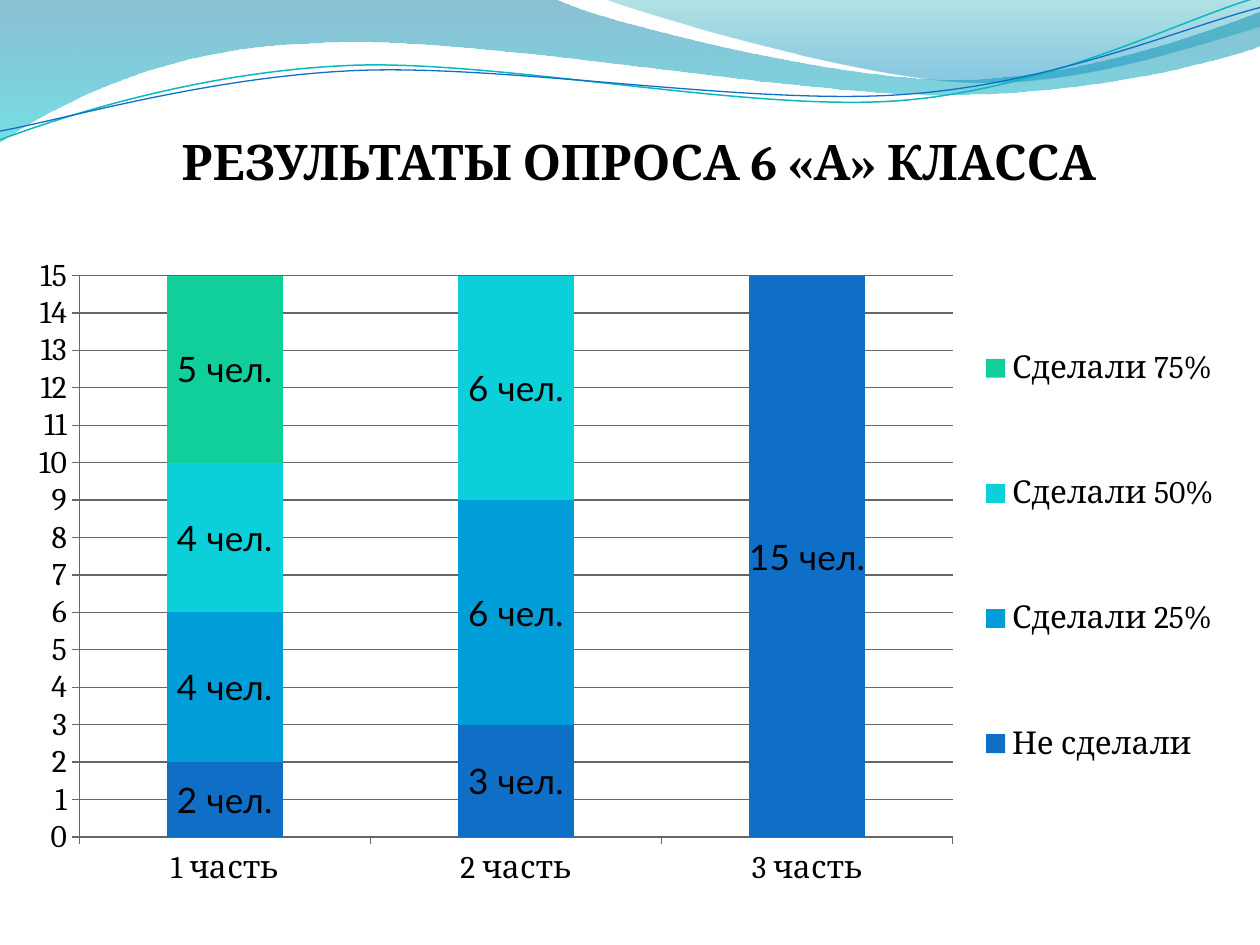
from dataclasses import dataclass

import pptx
import pptx.chart.data
import pptx.dml.color
import pptx.enum.chart
import pptx.enum.text
import pptx.oxml
import pptx.oxml.ns
import pptx.util
from lxml import etree

Point = tuple[float, float]
Curve = tuple[Point, Point, Point]


@dataclass(frozen=True)
class Theme:
    font: str = "Cambria"
    label_font: str = "Lato"
    title_size: float = 28
    axis_size: float = 18
    label_size: float = 20
    text: str = "000000"
    rule: str = "666666"


@dataclass(frozen=True)
class Area:
    """A rectangle in percent of its surroundings."""
    left: float
    top: float
    width: float
    height: float


@dataclass(frozen=True)
class Stop:
    position: float
    color: str
    opacity: int


@dataclass(frozen=True)
class Wave:
    """A filled band or an open line; each segment is a line's end or a Bezier curve, in inches."""
    start: Point
    segments: tuple[tuple[Point] | Curve, ...]
    stops: tuple[Stop, ...] = ()
    line_color: str = ""
    line_width: float = 0


@dataclass(frozen=True)
class Answer:
    name: str
    counts: tuple[int | None, ...]
    color: str


THEME = Theme()
TITLE_AREA = Area(11.35, 13.27, 78.7, 7.6)
CHART_AREA = Area(1.2, 25.87, 96.9, 69.33)
PLOT_AREA = Area(5.25, 4.75, 71.55, 85.7)
LEGEND_AREA = Area(78.6, 2.6, 20.5, 89.9)

WAVES = (
    Wave((0, 0), (
        ((4.4, -0.01),),
        ((4.76, 0.17), (6.64, 0.63), (7.58, 0.63)),
        ((8.53, 0.63), (9.58, 0.26), (10, 0.09)),
        ((10.01, 0.36),),
        ((9.83, 0.44), (8.7, 0.76), (7.46, 0.75)),
        ((6.22, 0.75), (3.82, 0.28), (2.57, 0.34)),
        ((1.29, 0.36), (0.46, 0.83), (-0.01, 1.13)),
    ), stops=(Stop(0, "0074A1", 45), Stop(1, "00C6CF", 55))),
    Wave((4.79, -0.01), (
        ((5.09, 0.11), (6.82, 0.62), (7.69, 0.65)),
        ((8.56, 0.69), (9.61, 0.32), (10, 0.21)),
        ((10, 0),),
    ), stops=(Stop(0, "00A1A9", 30), Stop(0.8, "008BBF", 45))),
    Wave((0, 1.11), (
        ((0.48, 0.93), (1.58, 0.57), (2.77, 0.52)),
        ((3.95, 0.47), (5.93, 0.89), (7.13, 0.8)),
        ((8.33, 0.71), (9.38, 0.15), (9.98, -0.02)),
    ), line_color="0AB8BF", line_width=0.85),
    Wave((0, 1.04), (
        ((0.47, 0.96), (1.64, 0.61), (2.83, 0.56)),
        ((4.03, 0.51), (5.97, 0.84), (7.17, 0.75)),
        ((8.36, 0.67), (9.41, 0.21), (10, 0.06)),
    ), line_color="0F6FC6", line_width=0.75),
)

PARTS = ("1 часть", "2 часть", "3 часть")
ANSWERS = (
    Answer("Не сделали", (2, 3, 15), "0F6FC6"),
    Answer("Сделали 25%", (4, 6, None), "009DD9"),
    Answer("Сделали 50%", (4, 6, None), "0BD0D9"),
    Answer("Сделали 75%", (5, None, None), "10CF9B"),
)


def rgb(color: str) -> pptx.dml.color.RGBColor:
    return pptx.dml.color.RGBColor.from_string(color)


def set_font(font, name: str, size: float, bold: bool = False) -> None:
    font.name, font.size, font.bold = name, pptx.util.Pt(size), bold
    font.color.rgb = rgb(THEME.text)


def on_slide(area: Area, deck) -> tuple[int, int, int, int]:
    width, height = deck.slide_width, deck.slide_height
    return (int(area.left * width / 100), int(area.top * height / 100),
            int(area.width * width / 100), int(area.height * height / 100))


def bend(band, wave: Wave) -> None:
    """Join the straight steps of each curve into one Bezier segment."""
    steps = iter(band._element.spPr.findall(".//" + pptx.oxml.ns.qn("a:lnTo")))
    for segment in wave.segments:
        lines = [next(steps) for _ in segment]
        if len(lines) == 1:
            continue
        curve = etree.Element(pptx.oxml.ns.qn("a:cubicBezTo"))
        lines[0].addprevious(curve)
        for line in lines:
            curve.append(line[0])
            line.getparent().remove(line)


def draw_wave(slide, wave: Wave) -> None:
    points = [wave.start] + [point for segment in wave.segments for point in segment]
    first, *rest = [(pptx.util.Inches(x), pptx.util.Inches(y)) for x, y in points]
    builder = slide.shapes.build_freeform(*first)
    builder.add_line_segments(rest, close=bool(wave.stops))
    band = builder.convert_to_shape()
    bend(band, wave)
    band.shadow.inherit = False
    if not wave.stops:
        band.fill.background()
        band.line.color.rgb = rgb(wave.line_color)
        band.line.width = pptx.util.Pt(wave.line_width)
        return
    band.line.fill.background()
    band.fill.gradient()
    band.fill.gradient_angle = 270
    for target, stop in zip(band.fill.gradient_stops, wave.stops):
        target.position = stop.position
        target.color.rgb = rgb(stop.color)
    gradient_colors = band._element.spPr.iterfind(".//" + pptx.oxml.ns.qn("a:gs") + "/*")
    for color, stop in zip(gradient_colors, wave.stops):
        etree.SubElement(color, pptx.oxml.ns.qn("a:alpha")).set("val", str(stop.opacity * 1000))


def chart_layout(area: Area, inner: bool = False):
    layout = pptx.oxml.parse_xml(f"<c:layout {pptx.oxml.ns.nsdecls('c')}><c:manualLayout/></c:layout>")
    settings = [("layoutTarget", "inner")] if inner else []
    settings += [("xMode", "edge"), ("yMode", "edge")]
    settings += [(key, f"{share / 100:.4f}") for key, share in
                 zip("xywh", (area.left, area.top, area.width, area.height))]
    for key, value in settings:
        etree.SubElement(layout[0], pptx.oxml.ns.qn(f"c:{key}")).set("val", value)
    return layout


def place_part(part, position: int, layout) -> None:
    """Give a plot area or legend its own layout."""
    for old in part.findall(pptx.oxml.ns.qn("c:layout")):
        part.remove(old)
    part.insert(position, layout)


def label_answer(series, answer: Answer) -> None:
    series.format.fill.solid()
    series.format.fill.fore_color.rgb = rgb(answer.color)
    labels = series.data_labels
    labels.show_value = True
    set_font(labels.font, THEME.label_font, THEME.label_size)
    for index, count in enumerate(answer.counts):
        if count is not None:
            label = series.points[index].data_label
            run = label.text_frame.paragraphs[0].add_run()
            run.text = f"{count} чел."
            set_font(run.font, THEME.label_font, THEME.label_size)


def draw_chart(slide, deck) -> None:
    data = pptx.chart.data.CategoryChartData()
    data.categories = PARTS
    for answer in ANSWERS:
        data.add_series(answer.name, answer.counts)
    chart = slide.shapes.add_chart(pptx.enum.chart.XL_CHART_TYPE.COLUMN_STACKED,
                                   *on_slide(CHART_AREA, deck), data).chart
    chart.has_title = False
    set_font(chart.font, THEME.font, THEME.axis_size)
    plot = chart.plots[0]
    plot.gap_width, plot.overlap, plot.vary_by_categories = 150, 100, False
    for series, answer in zip(plot.series, ANSWERS):
        label_answer(series, answer)

    counts = chart.value_axis
    counts.minimum_scale, counts.maximum_scale, counts.major_unit = 0, 15, 1
    counts.has_major_gridlines = True
    for axis in (chart.category_axis, counts):
        axis.major_tick_mark = pptx.enum.chart.XL_TICK_MARK.OUTSIDE
        set_font(axis.tick_labels.font, THEME.font, THEME.axis_size)
    for ruled in (chart.category_axis, counts, counts.major_gridlines):
        ruled.format.line.color.rgb = rgb(THEME.rule)
        ruled.format.line.width = pptx.util.Pt(0.75)

    chart.has_legend = True
    chart.legend.position = pptx.enum.chart.XL_LEGEND_POSITION.RIGHT
    chart.legend.include_in_layout = False
    set_font(chart.legend.font, THEME.font, THEME.axis_size)
    place_part(chart._chartSpace.chart.plotArea, 0, chart_layout(PLOT_AREA, inner=True))
    place_part(chart.legend._element, 1, chart_layout(LEGEND_AREA))


def write_title(slide, deck) -> None:
    title = slide.shapes.title
    title.left, title.top, title.width, title.height = on_slide(TITLE_AREA, deck)
    frame = title.text_frame
    frame.word_wrap = True
    frame.auto_size = pptx.enum.text.MSO_AUTO_SIZE.SHAPE_TO_FIT_TEXT
    frame.paragraphs[0].alignment = pptx.enum.text.PP_ALIGN.CENTER
    run = frame.paragraphs[0].add_run()
    run.text = "РЕЗУЛЬТАТЫ ОПРОСА 6 «А» КЛАССА"
    set_font(run.font, THEME.font, THEME.title_size, bold=True)


def main() -> None:
    deck = pptx.Presentation()
    deck.slide_width, deck.slide_height = pptx.util.Inches(10), pptx.util.Inches(7.5)
    slide = deck.slides.add_slide(deck.slide_layouts[5])
    for wave in WAVES:
        draw_wave(slide, wave)
    draw_chart(slide, deck)
    write_title(slide, deck)
    deck.save("out.pptx")


if __name__ == "__main__":
    main()
